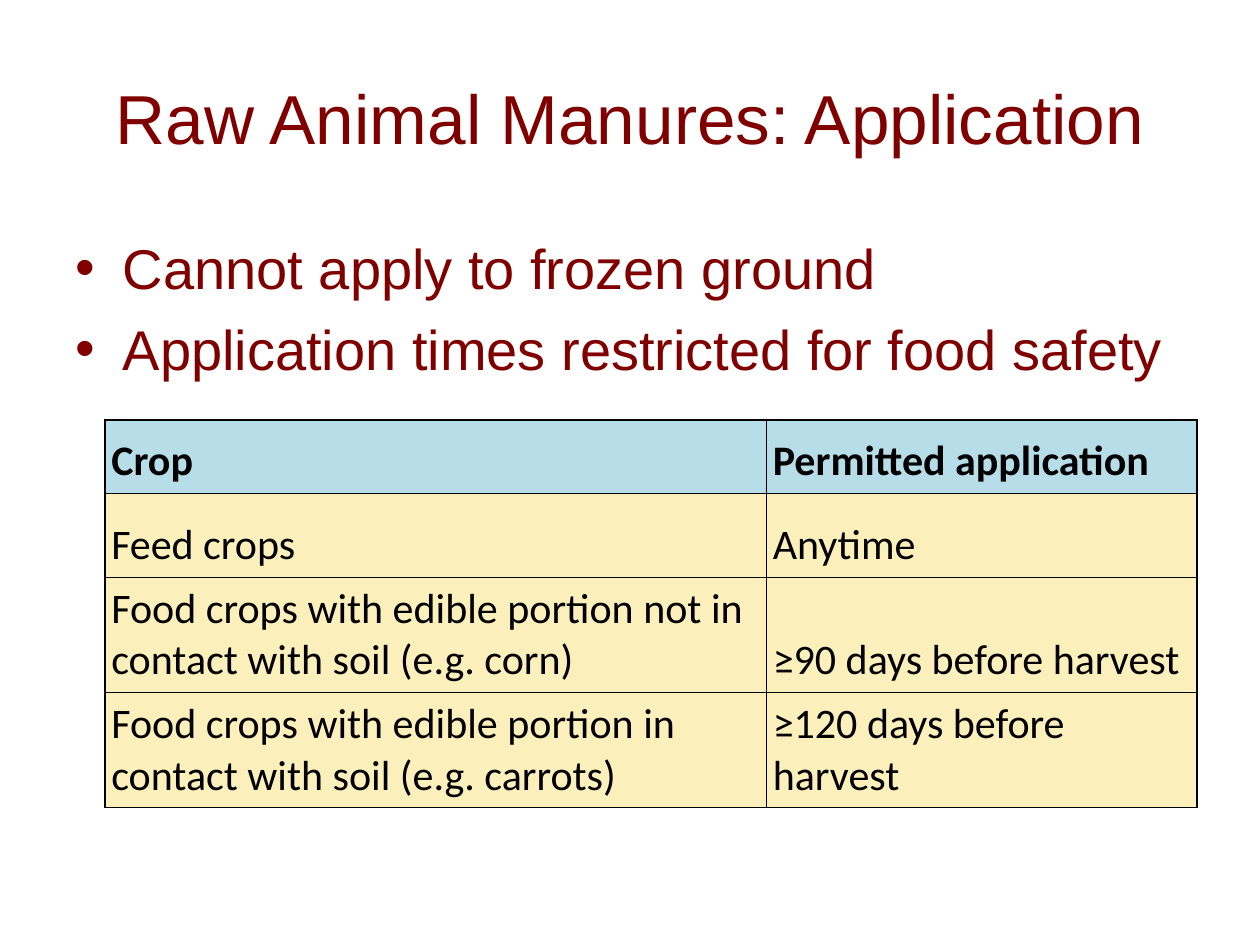
"""Builds a slide on when raw animal manures may be applied to crops."""
import pptx
import pptx.dml.color
import pptx.enum.text
import pptx.oxml.ns
import pptx.util
from lxml import etree

MAROON = pptx.dml.color.RGBColor(0x80, 0x00, 0x00)
BLACK = pptx.dml.color.RGBColor(0x00, 0x00, 0x00)
BLUE = pptx.dml.color.RGBColor(0xB7, 0xDE, 0xE8)
CREAM = pptx.dml.color.RGBColor(0xFB, 0xEF, 0xBB)
ANCHOR = pptx.enum.text.MSO_ANCHOR
ALIGN = pptx.enum.text.PP_ALIGN

COLUMNS, ROWS = 120, 90
CROPS = [
    ("Crop", "Permitted application"),
    ("Feed crops", "Anytime"),
    ("Food crops with edible portion not in contact with soil (e.g. corn)",
     "≥90 days before harvest"),
    ("Food crops with edible portion in contact with soil (e.g. carrots)",
     "≥120 days before harvest"),
]


def write(p, text, *, font, size, color, bold=False, align=None, before=0):
    p.alignment = align
    p.space_before = pptx.util.Pt(before)
    r = p.add_run()
    r.text = text
    r.font.name = font
    r.font.size = pptx.util.Pt(size)
    r.font.bold = bold
    r.font.color.rgb = color


def add_borders(cell, color, points):
    tc_pr = cell._tc.get_or_add_tcPr()
    for i, side in enumerate(("lnL", "lnR", "lnT", "lnB")):
        ln = etree.Element(pptx.oxml.ns.qn(f"a:{side}"), w=str(pptx.util.Pt(points)))
        fill = etree.SubElement(ln, pptx.oxml.ns.qn("a:solidFill"))
        etree.SubElement(fill, pptx.oxml.ns.qn("a:srgbClr"), val=str(color))
        tc_pr.insert(i, ln)


class SlideBuilder:
    heading = {"font": "Arial", "color": MAROON}
    body = {"font": "Calibri", "size": 24, "color": BLACK}

    def __init__(self, prs):
        self.col = prs.slide_width / COLUMNS
        self.row = prs.slide_height / ROWS
        self.slide = prs.slides.add_slide(prs.slide_layouts[1])

    def box(self, x, y, w, h):
        return [round(n) for n in (x * self.col, y * self.row, w * self.col, h * self.row)]

    def placeholder(self, sp, *area):
        sp.left, sp.top, sp.width, sp.height = self.box(*area)
        sp.text_frame.auto_size = pptx.enum.text.MSO_AUTO_SIZE.NONE
        return sp.text_frame

    def title(self, text, *area):
        tf = self.placeholder(self.slide.shapes.title, *area)
        tf.vertical_anchor = ANCHOR.MIDDLE
        write(tf.paragraphs[0], text, size=39.6, align=ALIGN.CENTER, **self.heading)

    def bullets(self, items, *area):
        tf = self.placeholder(self.slide.placeholders[1], *area)
        tf.margin_top = pptx.util.Inches(0.1)
        for i, text in enumerate(items):
            p = tf.add_paragraph() if i else tf.paragraphs[0]
            write(p, text, size=32, before=8 if i else 0, **self.heading)

    def table(self, data, x, y, widths, heights):
        area = self.box(x, y, sum(widths), sum(heights))
        table = self.slide.shapes.add_table(len(data), len(widths), *area).table
        table.first_row = table.horz_banding = False
        for column, width in zip(table.columns, widths):
            column.width = round(width * self.col)
        for i, (row, height) in enumerate(zip(table.rows, heights)):
            row.height = round(height * self.row)
            for cell, text in zip(row.cells, data[i]):
                self.cell(cell, text, header=i == 0)

    def cell(self, cell, text, header):
        cell.fill.solid()
        cell.fill.fore_color.rgb = BLUE if header else CREAM
        cell.vertical_anchor = ANCHOR.BOTTOM
        margin = pptx.util.Inches(0.05)
        cell.margin_left = cell.margin_right = margin
        cell.margin_top = cell.margin_bottom = margin
        add_borders(cell, BLACK, 1)
        write(cell.text_frame.paragraphs[0], text, bold=header, **self.body)


def main():
    prs = pptx.Presentation()
    prs.slide_width = pptx.util.Inches(10)
    prs.slide_height = pptx.util.Inches(7.5)
    s = SlideBuilder(prs)
    s.title("Raw Animal Manures: Application", 6, 3.6, 108, 15)
    s.bullets(["Cannot apply to frozen ground",
               "Application times restricted for food safety"], 6, 21, 108, 59.4)
    s.table(CROPS, 10, 40, widths=(63, 41), heights=(7, 8, 10.67, 10.67))
    prs.save("out.pptx")


if __name__ == "__main__":
    main()
